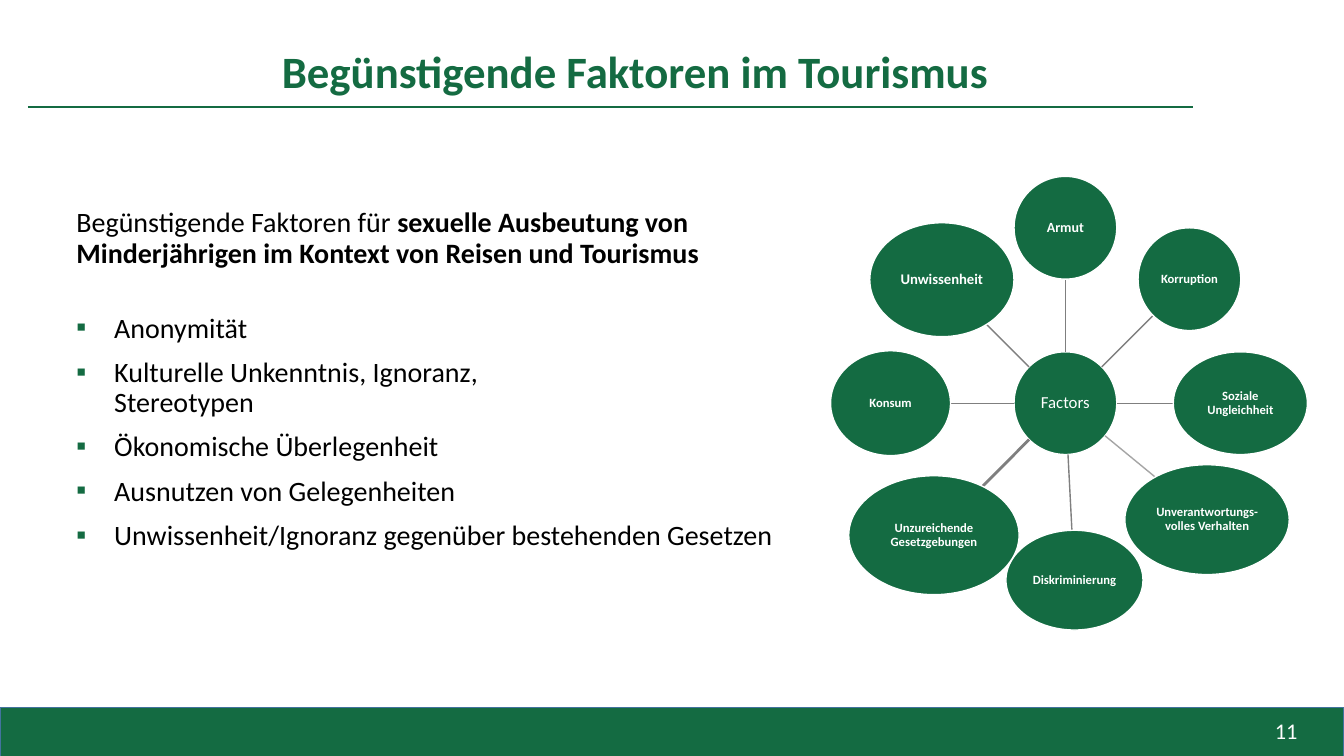
from math import hypot

from lxml import etree
from pptx import Presentation
from pptx.dml.color import RGBColor
from pptx.enum.shapes import MSO_CONNECTOR, MSO_SHAPE
from pptx.enum.text import MSO_ANCHOR, PP_ALIGN
from pptx.oxml.ns import qn
from pptx.util import Pt

STRAIGHT = MSO_CONNECTOR.STRAIGHT
RECTANGLE, OVAL = MSO_SHAPE.RECTANGLE, MSO_SHAPE.OVAL
TOP, MIDDLE = MSO_ANCHOR.TOP, MSO_ANCHOR.MIDDLE
LEFT, CENTER, RIGHT = PP_ALIGN.LEFT, PP_ALIGN.CENTER, PP_ALIGN.RIGHT

GREEN = RGBColor(0x14, 0x6B, 0x42)
BLUE = RGBColor(0x43, 0x73, 0x9E)
GREY = RGBColor(0x7F, 0x7F, 0x7F)
LIGHT_GREY = RGBColor(0xA5, 0xA5, 0xA5)
WHITE = RGBColor(0xFF, 0xFF, 0xFF)
BLACK = RGBColor(0x00, 0x00, 0x00)

TITLE = "Begünstigende Faktoren im Tourismus"
INTRO = [
    [("Begünstigende Faktoren für ", False), ("sexuelle Ausbeutung von", True)],
    [("Minderjährigen im Kontext von Reisen und Tourismus", True)],
]
BULLETS = [
    "Anonymität",
    "Kulturelle Unkenntnis, Ignoranz,\vStereotypen",
    "Ökonomische Überlegenheit",
    "Ausnutzen von Gelegenheiten",
    "Unwissenheit/Ignoranz gegenüber bestehenden Gesetzen",
]

# Ovals are given as centre x, centre y, width, height.
HUB = (761, 288, 73.4, 73.4)
# label, oval, text size, spoke colour, spoke width
FACTORS = [
    ("Armut", (761, 162.7, 73.4, 73.4), 10, GREY, 1),
    ("Korruption", (849.6, 199.4, 73.4, 73.4), 9, GREY, 1),
    ("Soziale Ungleichheit", (886, 288, 95.8, 73.4), 9, GREY, 1),
    ("Unverantwortungs-volles Verhalten", (862.2, 371.2, 117.4, 78.5), 9, LIGHT_GREY, 1),
    ("Diskriminierung", (767.5, 414.4, 97.9, 71.3), 9, GREY, 1),
    ("Unzureichende Gesetzgebungen", (667.1, 382.3, 121.7, 85), 9, GREY, 2),
    ("Konsum", (636.1, 288, 85.7, 74.9), 9, GREY, 1),
    ("Unwissenheit", (672.8, 199.8, 103, 81.4), 10.5, GREY, 1),
]


def edge_point(oval, target):
    """Return where the line from the oval's centre to the target's leaves the oval."""
    x, y, width, height = oval
    dx, dy = target[0] - x, target[1] - y
    scale = 1 / hypot(dx / (width / 2), dy / (height / 2))
    return x + dx * scale, y + dy * scale


class SlideBuilder:
    font_name = "Calibri"
    line_spacing = 0.9

    def __init__(self, presentation):
        self.slide = presentation.slides.add_slide(presentation.slide_layouts[5])

    def style(self, paragraph, size, color, bold=False, align=LEFT):
        paragraph.alignment = align
        paragraph.line_spacing = self.line_spacing
        for run in paragraph.runs:
            run.font.name = self.font_name
            run.font.size = Pt(size)
            run.font.color.rgb = color
            run.font.bold = bold

    def title(self, text, left, top, width, height):
        shape = self.slide.shapes.title
        shape.left, shape.top = Pt(left), Pt(top)
        shape.width, shape.height = Pt(width), Pt(height)
        shape.text_frame.text = text
        shape.text_frame.vertical_anchor = MIDDLE
        self.style(shape.text_frame.paragraphs[0], 32, GREEN, True, CENTER)

    def text_box(self, left, top, width, height):
        box = self.slide.shapes.add_textbox(Pt(left), Pt(top), Pt(width), Pt(height))
        box.text_frame.word_wrap = True
        box.text_frame.vertical_anchor = TOP
        return box.text_frame

    def label(self, text, left, top, width, height, size, color, align):
        text_frame = self.text_box(left, top, width, height)
        text_frame.text = text
        self.style(text_frame.paragraphs[0], size, color, align=align)

    def body(self, intro, bullets, left, top, width, height):
        text_frame = self.text_box(left, top, width, height)
        for index, parts in enumerate(intro):
            paragraph = text_frame.add_paragraph() if index else text_frame.paragraphs[0]
            for text, _ in parts:
                paragraph.add_run().text = text
            self.style(paragraph, 20, BLACK)
            for run, (_, bold) in zip(paragraph.runs, parts):
                run.font.bold = bold
        for index, text in enumerate(bullets):
            paragraph = text_frame.add_paragraph()
            paragraph.text = text
            self.bullet(paragraph)
            paragraph.space_before = Pt(10 if index else 32)
            self.style(paragraph, 20, BLACK)

    def bullet(self, paragraph):
        properties = paragraph._p.get_or_add_pPr()
        properties.set("marL", str(Pt(27)))
        properties.set("indent", str(-Pt(27)))
        color = etree.SubElement(properties, qn("a:buClr"))
        etree.SubElement(color, qn("a:srgbClr"), val=str(GREEN))
        etree.SubElement(properties, qn("a:buFont"), typeface=self.font_name)
        etree.SubElement(properties, qn("a:buChar"), char="▪")

    def shape(self, kind, left, top, width, height, line_color):
        shape = self.slide.shapes.add_shape(kind, Pt(left), Pt(top), Pt(width), Pt(height))
        shape.shadow.inherit = False
        shape.fill.solid()
        shape.fill.fore_color.rgb = GREEN
        shape.line.color.rgb = line_color
        shape.line.width = Pt(1)
        return shape

    def oval(self, text, oval, size, bold=True):
        x, y, width, height = oval
        shape = self.shape(OVAL, x - width / 2, y - height / 2, width, height, WHITE)
        text_frame = shape.text_frame
        text_frame.word_wrap = True
        text_frame.vertical_anchor = MIDDLE
        text_frame.margin_left = text_frame.margin_right = Pt(0.7)
        text_frame.margin_top = text_frame.margin_bottom = Pt(0.7)
        text_frame.text = text
        self.style(text_frame.paragraphs[0], size, WHITE, bold, CENTER)

    def line(self, start, end, color, width):
        points = [Pt(value) for value in (*start, *end)]
        connector = self.slide.shapes.add_connector(STRAIGHT, *points)
        connector.line.color.rgb = color
        connector.line.width = Pt(width)
        etree.SubElement(connector._element.spPr, qn("a:effectLst"))


def main():
    presentation = Presentation()
    presentation.slide_width, presentation.slide_height = Pt(960), Pt(540)
    builder = SlideBuilder(presentation)

    builder.shape(RECTANGLE, 0, 505.5, 960, 39.5, BLUE)
    builder.line((20, 76.3), (852.5, 76.3), GREEN, 1.5)
    builder.label("11", 821.5, 511, 112.3, 26.6, 16, WHITE, RIGHT)
    builder.title(TITLE, 66, 30, 775.5, 45)
    builder.body(INTRO, BULLETS, 47.5, 145.5, 828, 342.7)

    builder.oval("Factors", HUB, 12, bold=False)
    for text, oval, size, color, width in FACTORS:
        builder.line(edge_point(HUB, oval), edge_point(oval, HUB), color, width)
        builder.oval(text, oval, size)

    presentation.save("out.pptx")


if __name__ == "__main__":
    main()
